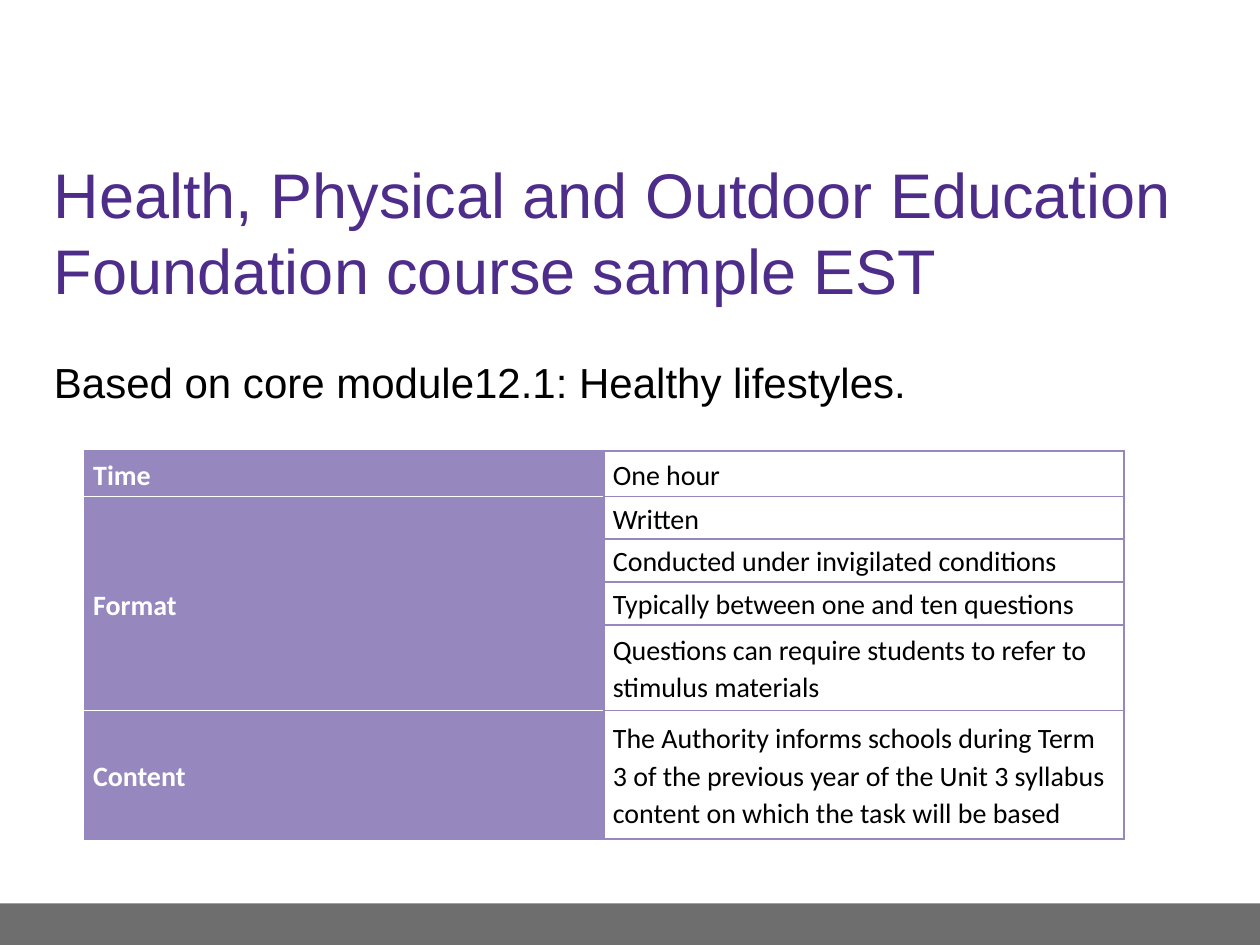
"""Build the slide that outlines the sample EST for a Foundation course."""
from dataclasses import dataclass

from lxml import etree
from pptx import Presentation
from pptx import util as u
from pptx.dml.color import RGBColor
from pptx.enum import shapes, text
from pptx.oxml import ns


@dataclass(frozen=True)
class Theme:
    """Colours, fonts and type sizes."""
    purple: str = "4D2C8A"
    lilac: str = "9688BE"
    grey: str = "6E6E6E"
    black: str = "000000"
    white: str = "FFFFFF"
    text_font: str = "Arial"
    table_font: str = "Calibri"
    title_size: int = 36
    body_size: int = 24
    table_size: int = 16


SECTIONS = [
    ("Time", [("One hour", 0.36)]),
    ("Format", [
        ("Written", 0.34),
        ("Conducted under invigilated conditions", 0.34),
        ("Typically between one and ten questions", 0.34),
        ("Questions can require students to refer to stimulus materials", 0.68),
    ]),
    ("Content", [
        ("The Authority informs schools during Term 3 of the previous year of "
         "the Unit 3 syllabus content on which the task will be based", 1.02),
    ]),
]


def write(tf, content, *, font, size, color, bold=False, spacing=None, after=0):
    """Write one formatted paragraph into a text frame."""
    p = tf.paragraphs[0]
    p.line_spacing = spacing
    p.space_after = u.Pt(after)
    r = p.add_run()
    r.text = content
    r.font.name, r.font.size, r.font.bold = font, u.Pt(size), bold
    r.font.color.rgb = RGBColor.from_string(color)


class SlideBuilder:
    """Hold the theme and the current slide, and add elements to it."""

    def __init__(self, prs, theme):
        self.theme = theme
        self.s = prs.slides.add_slide(prs.slide_layouts[6])

    def bar(self, left, top, width, height, color):
        """Add a plain filled rectangle."""
        sp = self.s.shapes.add_shape(
            shapes.MSO_SHAPE.RECTANGLE, *map(u.Inches, (left, top, width, height)))
        sp.shadow.inherit = False
        sp.fill.solid()
        sp.fill.fore_color.rgb = RGBColor.from_string(color)
        sp.line.fill.background()

    def text(self, left, top, width, height, content,
             anchor=text.MSO_ANCHOR.TOP, **style):
        """Add a wrapping text box."""
        sp = self.s.shapes.add_textbox(*map(u.Inches, (left, top, width, height)))
        tf = sp.text_frame
        tf.word_wrap = True
        tf.vertical_anchor = anchor
        write(tf, content, font=self.theme.text_font, **style)

    def borders(self, cell, **colors):
        """Draw the four cell borders, lilac unless a side is given a colour."""
        tc_pr = cell._tc.get_or_add_tcPr()
        for i, side in enumerate("LRTB"):
            ln = etree.Element(ns.qn(f"a:ln{side}"), w=str(u.Pt(1)))
            fill = etree.SubElement(ln, ns.qn("a:solidFill"))
            etree.SubElement(fill, ns.qn("a:srgbClr"),
                             val=colors.get(side, self.theme.lilac))
            tc_pr.insert(i, ln)

    def cell(self, cell, content, **style):
        """Write a table cell's text, centred in height."""
        cell.vertical_anchor = text.MSO_ANCHOR.MIDDLE
        cell.margin_left = cell.margin_right = u.Inches(0.07)
        cell.margin_top = cell.margin_bottom = 0
        write(cell.text_frame, content, font=self.theme.table_font,
              size=self.theme.table_size, **style)

    def table(self, left, top, width, sections):
        """Add a two-column table whose headings span their section's rows."""
        t = self.theme
        heights = [h for _, items in sections for _, h in items]
        table = self.s.shapes.add_table(
            len(heights), 2, *map(u.Inches, (left, top, width, sum(heights)))).table
        table.first_row = table.horz_banding = False
        for row, height in zip(table.rows, heights):
            row.height = u.Inches(height)
        first = 0
        for heading, items in sections:
            last = first + len(items) - 1
            for i, (content, _) in enumerate(items, first):
                head, detail = table.cell(i, 0), table.cell(i, 1)
                head.fill.solid()
                head.fill.fore_color.rgb = RGBColor.from_string(t.lilac)
                detail.fill.background()
                self.borders(head, T=t.white if first else t.lilac,
                             B=t.white if last < len(heights) - 1 else t.lilac)
                self.borders(detail)
                self.cell(detail, content, color=t.black, spacing=1.1, after=1.5)
            head = table.cell(first, 0)
            if last > first:
                head.merge(table.cell(last, 0))
            self.cell(head, heading, color=t.white, bold=True, spacing=1.15)
            first = last + 1


def main():
    """Build and save the slide."""
    prs = Presentation()
    prs.slide_width, prs.slide_height = u.Inches(10), u.Inches(7.5)
    theme = Theme()
    b = SlideBuilder(prs, theme)
    b.bar(0, 7.17, 10, 0.33, theme.grey)
    b.text(0.33, 1.25, 9.35, 1.17,
           "Health, Physical and Outdoor Education Foundation course sample EST",
           anchor=text.MSO_ANCHOR.MIDDLE, size=theme.title_size, color=theme.purple)
    b.text(0.33, 2.78, 9.33, 0.5, "Based on core module12.1: Healthy lifestyles.",
           size=theme.body_size, color=theme.black)
    b.table(0.67, 3.58, 8.25, SECTIONS)
    prs.save("out.pptx")


if __name__ == "__main__":
    main()
